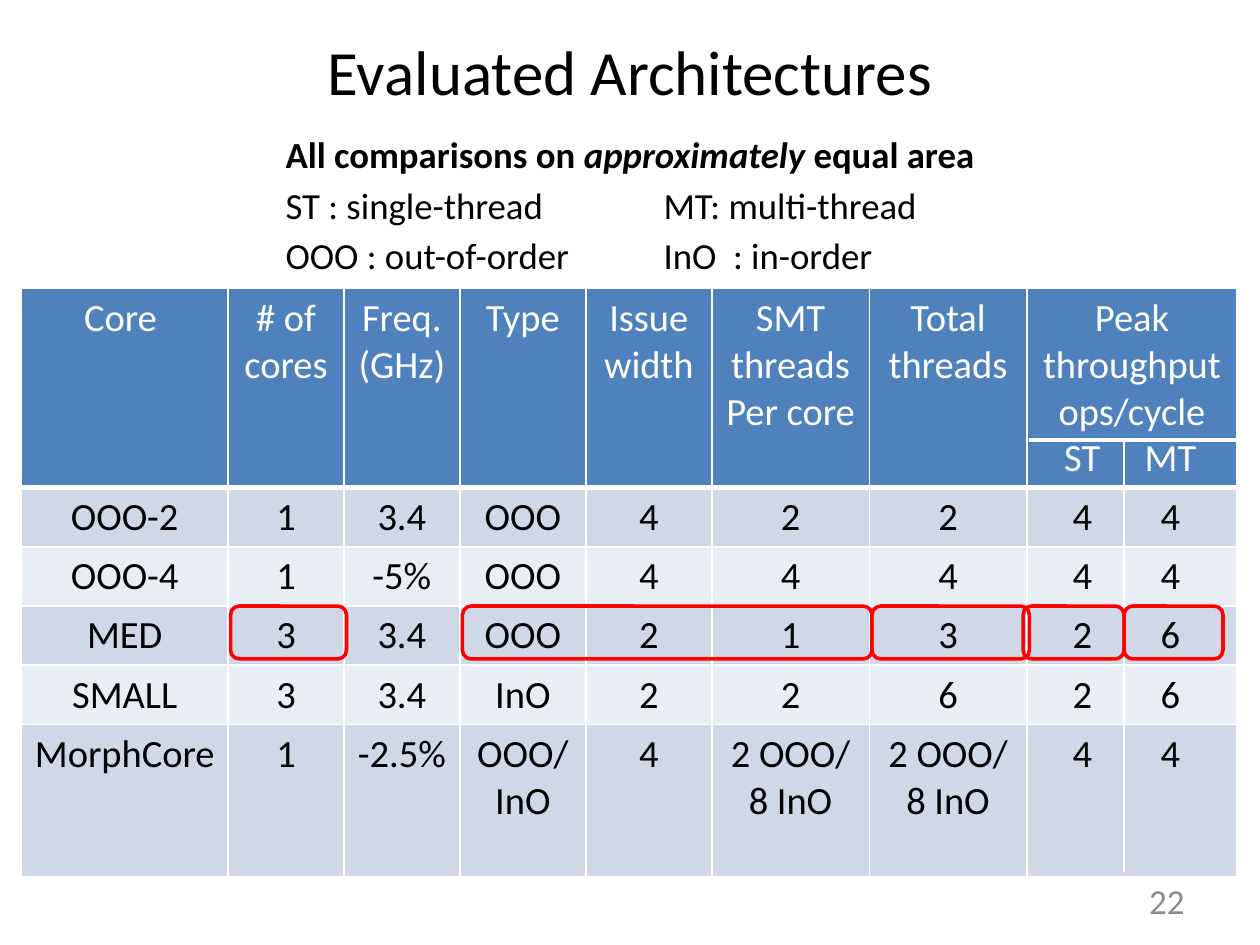
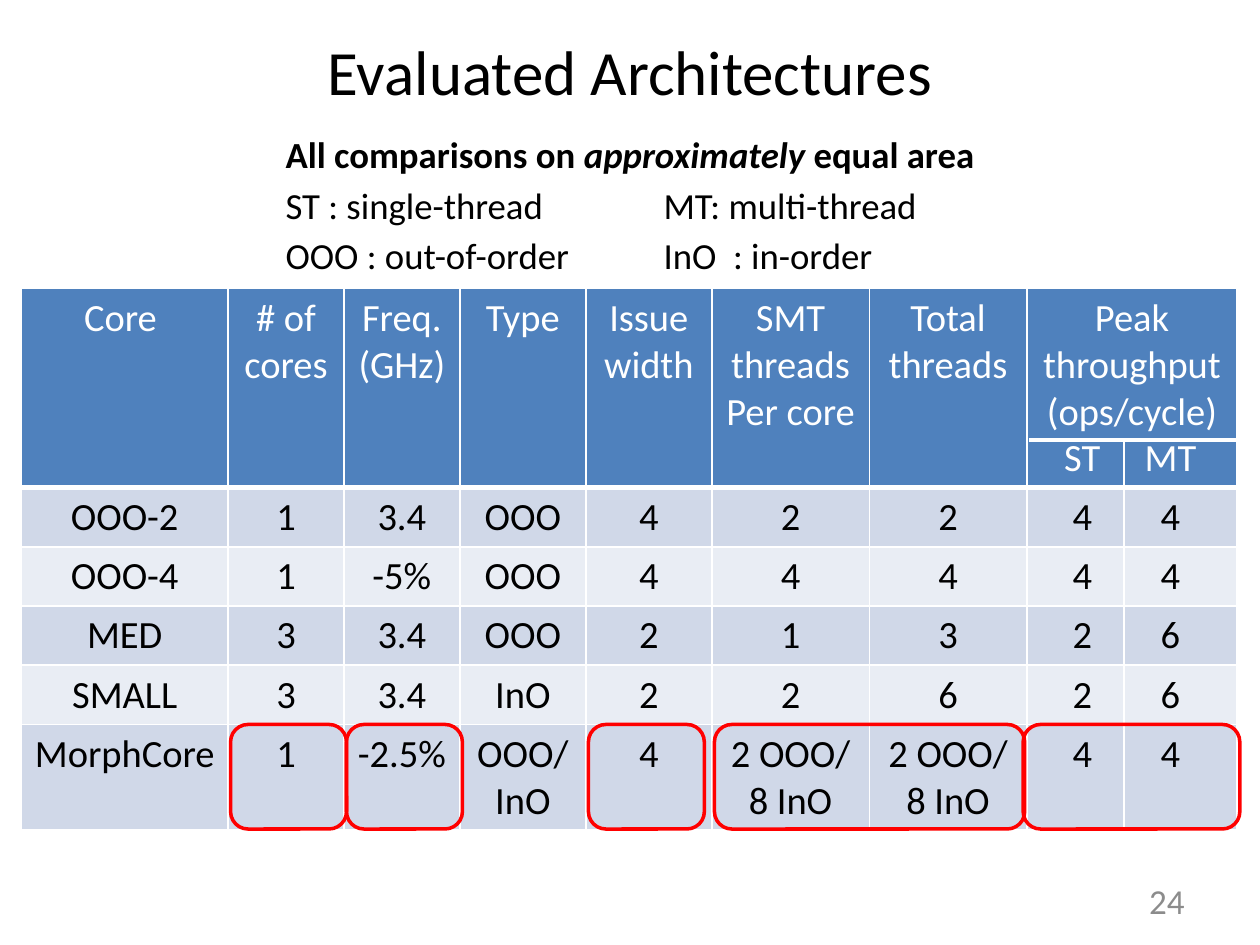
import pptx
import pptx.util
import pptx.dml.color
import pptx.enum.shapes
import pptx.enum.text
import pptx.oxml
import pptx.oxml.ns

FONT = "Calibri"
BLACK, WHITE, GREY, RED = "000000", "FFFFFF", "8C8C8C", "FF0000"
HEADER_FILL, BAND_FILLS = "4F81BD", ("D0D8E8", "E9EDF4")
WIDTH, HEIGHT = 10, 7.5
TABLE_LEFT, TABLE_TOP = 0.17, 2.29
COLUMNS = [1.64, 0.92, 0.92, 1, 1, 1.25, 1.25, 1.67]
HEADER_ROW, BODY_ROW = 1.58, 0.47
PEAK, PEAK_SPLIT = 7, 7.45
RING_GAP = 0.02
TAB_STOPS = (0.34, 1.04)
ALIGN = pptx.enum.text.PP_ALIGN
ANCHOR = pptx.enum.text.MSO_ANCHOR
INCH = pptx.util.Inches

HEADINGS = ["Core ", "# of cores", "Freq. (GHz)", "Type", "Issue\nwidth",
            "SMT threads\nPer core", "Total threads"]
CORES = [
    ["OOO-2", "1", "3.4", "OOO", "4", "2", "2", "\t4\t4"],
    ["OOO-4", "1", "-5%", "OOO", "4", "4", "4", "\t4\t4"],
    ["MED", "3", "3.4", "OOO", "2", "1", "3", "\t2\t6"],
    ["SMALL", "3", "3.4", "InO", "2", "2", "6", "\t2\t6"],
    ["MorphCore", "1", "-2.5%", "OOO/\nInO", "4", "2 OOO/ 8 InO",
     "2 OOO/ 8 InO", "\t4\t4"],
]
LEGEND = [
    [("All comparisons on ", {"bold": True}),
     ("approximately", {"bold": True, "italic": True}),
     (" equal area", {"bold": True})],
    [("ST : single-thread\t\tMT: multi-thread", {})],
    [("OOO : out-of-order \t\tInO  : in-order", {})],
]
SLIDES = [
    {"number": "22", "unit": "ops/cycle", "last_row": 1.21,
     "ringed_row": 3, "ring_height": 0.42,
     "ringed_columns": [(3, 6), (1, 2), (7.45, 7.92), (6.96, 7.45), (6, 7)]},
    {"number": "24", "unit": "(ops/cycle)", "last_row": 0.83,
     "ringed_row": 5, "ring_height": 0.83,
     "ringed_columns": [(5, 6.97), (2, 3), (4, 4.92), (6.96, 8), (1, 2)]},
]


def color(value):
    return pptx.dml.color.RGBColor.from_string(value)


def apply(target, formats):
    for name, value in formats.items():
        setattr(target, name, value)


def column_edge(position):
    whole = int(position)
    part = (position - whole) * COLUMNS[whole] if whole < len(COLUMNS) else 0
    return TABLE_LEFT + sum(COLUMNS[:whole]) + part


def row_top(row):
    return TABLE_TOP + (HEADER_ROW + (row - 1) * BODY_ROW if row else 0)


def add_span(para, text, size, ink, **formats):
    span = para.add_run()
    span.text = text
    apply(span.font, {"name": FONT, "size": pptx.util.Pt(size), "bold": False, **formats})
    span.font.color.rgb = color(ink)


def add_box(page, left, top, width, height, **formats):
    box = page.shapes.add_textbox(INCH(left), INCH(top), INCH(width), INCH(height))
    apply(box.text_frame, {"word_wrap": True, **formats})
    return box.text_frame


def add_label(page, area, text, size, ink, alignment):
    para = add_box(page, *area, vertical_anchor=ANCHOR.MIDDLE).paragraphs[0]
    para.alignment = alignment
    add_span(para, text, size, ink)


def add_legend(page):
    frame = add_box(page, WIDTH / 6, 1, 6.92, 1.08, margin_left=INCH(0.6))
    for index, spans in enumerate(LEGEND):
        para = frame.add_paragraph() if index else frame.paragraphs[0]
        para.space_before = pptx.util.Pt(3.5)
        for text, formats in spans:
            add_span(para, text, 21, BLACK, **formats)


def add_tab_stops(para):
    stops = pptx.oxml.ns.qn("a:tabLst")
    holder = para._p.get_or_add_pPr()
    tabs = holder.makeelement(stops, {})
    for stop in TAB_STOPS:
        tabs.append(tabs.makeelement(pptx.oxml.ns.qn("a:tab"),
                                     {"pos": str(INCH(stop)), "algn": "ctr"}))
    holder.append(tabs)


def add_borders(cell, bottom):
    holder = cell._tc.get_or_add_tcPr()
    for index, (side, points) in enumerate(zip("LRTB", (1, 1, 1, bottom))):
        holder.insert(index, pptx.oxml.parse_xml(
            f'<a:ln{side} {pptx.oxml.ns.nsdecls("a")} w="{pptx.util.Pt(points)}">'
            f'<a:solidFill><a:srgbClr val="{WHITE}"/></a:solidFill></a:ln{side}>'))


def fill_cell(cell, text, fill, ink, bottom):
    cell.fill.solid()
    cell.fill.fore_color.rgb = color(fill)
    add_borders(cell, bottom)
    for index, line in enumerate(text.split("\n")):
        para = cell.text_frame.add_paragraph() if index else cell.text_frame.paragraphs[0]
        if "\t" in line:
            para.alignment = ALIGN.LEFT
            add_tab_stops(para)
        else:
            para.alignment = ALIGN.CENTER
        add_span(para, line, 22, ink)


def add_core_table(page, unit, last_row):
    rows = [HEADINGS + [f"Peak throughput\n{unit}\n\tST\tMT"]] + CORES
    heights = [HEADER_ROW] + [BODY_ROW] * (len(CORES) - 1) + [last_row]
    table = page.shapes.add_table(
        len(rows), len(COLUMNS), INCH(TABLE_LEFT), INCH(TABLE_TOP),
        INCH(sum(COLUMNS)), INCH(sum(heights))).table
    for column, width in zip(table.columns, COLUMNS):
        column.width = INCH(width)
    for index, (row, height, texts) in enumerate(zip(table.rows, heights, rows)):
        row.height = INCH(height)
        fill = BAND_FILLS[(index - 1) % 2] if index else HEADER_FILL
        ink, bottom = (BLACK, 1) if index else (WHITE, 3)
        for cell, text in zip(row.cells, texts):
            fill_cell(cell, text, fill, ink, bottom)


def add_divider(page, start, end, weight):
    line = page.shapes.add_connector(
        pptx.enum.shapes.MSO_CONNECTOR.STRAIGHT, *map(INCH, (*start, *end)))
    line.line.color.rgb = color(WHITE)
    line.line.width = pptx.util.Pt(weight)
    shape_format = line._element.spPr
    shape_format.append(shape_format.makeelement(pptx.oxml.ns.qn("a:effectLst"), {}))


def add_peak_dividers(page):
    top = TABLE_TOP + 1.2
    split = column_edge(PEAK_SPLIT) + RING_GAP
    add_divider(page, (column_edge(PEAK) + RING_GAP, top),
                (column_edge(len(COLUMNS)) + RING_GAP, top), 2.25)
    add_divider(page, (split, top), (split, 6.92), 1.5)


def add_ring(page, first, last, row, height):
    left = column_edge(first) + RING_GAP
    ring = page.shapes.add_shape(
        pptx.enum.shapes.MSO_SHAPE.ROUNDED_RECTANGLE, INCH(left), INCH(row_top(row)),
        INCH(column_edge(last) + RING_GAP - left), INCH(height))
    ring.shadow.inherit = False
    ring.fill.background()
    ring.line.color.rgb = color(RED)
    ring.line.width = pptx.util.Pt(2)


def add_page(deck, content):
    page = deck.slides.add_slide(deck.slide_layouts[6])
    add_label(page, (0.5, 0.17, WIDTH - 1, 0.78), "Evaluated Architectures",
              36, BLACK, ALIGN.CENTER)
    add_core_table(page, content["unit"], content["last_row"])
    add_label(page, (7.17, 6.95, 2.33, 0.4), content["number"], 20, GREY, ALIGN.RIGHT)
    add_legend(page)
    add_peak_dividers(page)
    for first, last in content["ringed_columns"]:
        add_ring(page, first, last, content["ringed_row"], content["ring_height"])


def main():
    deck = pptx.Presentation()
    apply(deck, {"slide_width": INCH(WIDTH), "slide_height": INCH(HEIGHT)})
    for content in SLIDES:
        add_page(deck, content)
    deck.save("out.pptx")


if __name__ == "__main__":
    main()
